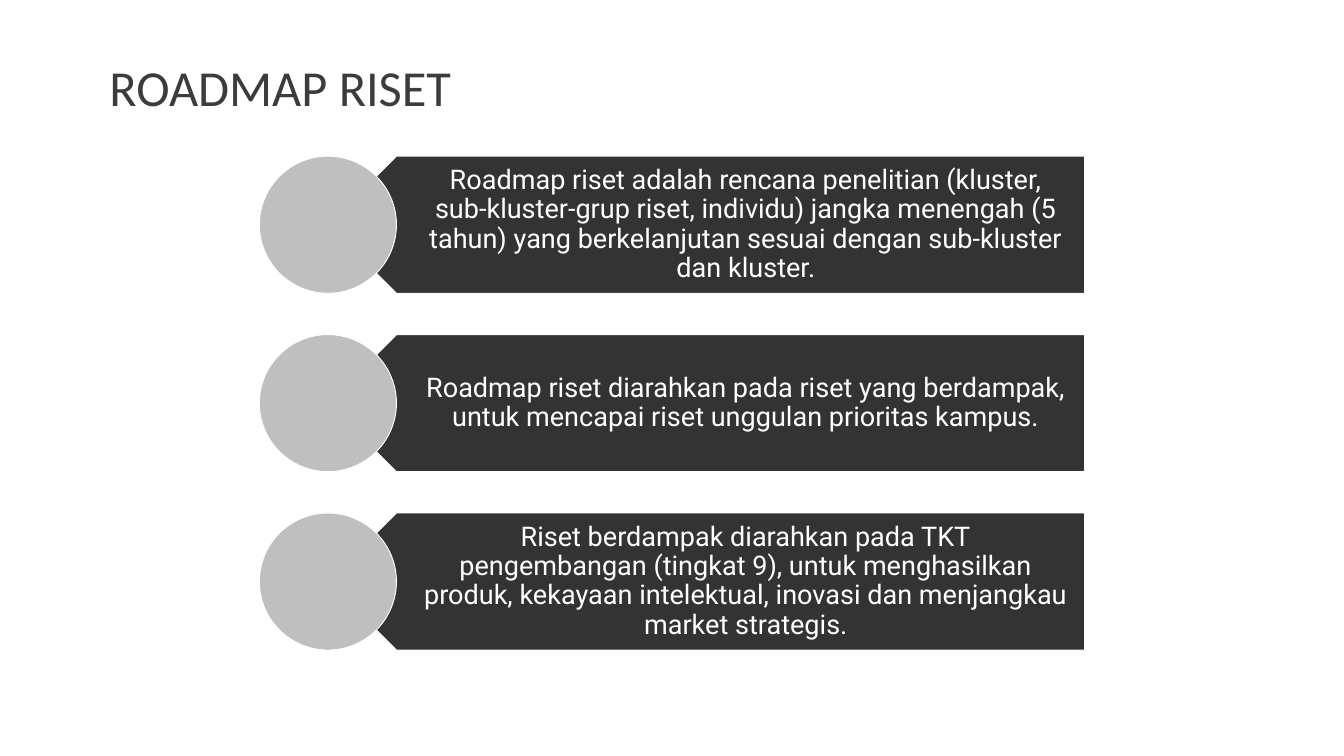
from pptx import Presentation
from pptx.dml.color import RGBColor as RGB
from pptx.enum.shapes import MSO_SHAPE as Kind
from pptx.enum.text import MSO_ANCHOR as Anchor, PP_ALIGN as Align
from pptx.util import Inches, Pt

POINTS = [
    "Roadmap riset adalah rencana penelitian (kluster, sub-kluster-grup riset, "
    "individu) jangka menengah (5 tahun) yang berkelanjutan sesuai dengan "
    "sub-kluster dan kluster.",
    "Roadmap riset diarahkan pada riset yang berdampak, untuk mencapai riset "
    "unggulan prioritas kampus.",
    "Riset berdampak diarahkan pada TKT\npengembangan (tingkat 9), untuk "
    "menghasilkan produk, kekayaan intelektual, inovasi dan menjangkau market "
    "strategis.",
]
TOP, HIGH, STEP = 20.66, 18.13, 23.6  # band rows, in % of slide height

HEAD = {"size": Pt(54), "name": "Calibri"}
BODY = {"size": Pt(29), "name": "Roboto"}
INSET = {
    "margin_left": Inches(0.9), "margin_right": Inches(0.23),
    "margin_top": Inches(0.12), "margin_bottom": Inches(0.12),
}


def color(code):
    return RGB.from_string(code)


def apply(item, values):
    for key, value in values.items():
        setattr(item, key, value)


class Deck:
    """Holds the style and the current slide; boxes are in % of its size."""

    ink, dark, gray, white = "3C3C3C", "333333", "BFBFBF", "FFFFFF"

    def __init__(self, wide, high):
        self.prs = Presentation()
        apply(self.prs, {"slide_width": Inches(wide), "slide_height": Inches(high)})
        self.slide = self.prs.slides.add_slide(self.prs.slide_layouts[6])

    def place(self, box):
        sizes = (self.prs.slide_width, self.prs.slide_height) * 2
        return [round(share * size / 100) for share, size in zip(box, sizes)]

    def shape(self, kind, box, fill, turn=0):
        item = self.slide.shapes.add_shape(kind, *self.place(box))
        item.rotation = turn
        item.shadow.inherit = False
        item.fill.solid()
        item.fill.fore_color.rgb = color(fill)
        item.line.color.rgb = color(self.white)
        item.line.width = Pt(1)

    def text(self, words, box, font, ink, align=Align.LEFT, inset=None):
        """Adds one paragraph; a newline in words is a line break."""
        frame = self.slide.shapes.add_textbox(*self.place(box)).text_frame
        apply(frame, {"word_wrap": True, "vertical_anchor": Anchor.MIDDLE})
        apply(frame, inset or {})
        para = frame.paragraphs[0]
        apply(para, {"text": words, "alignment": align, "line_spacing": 0.9})
        for run in para.runs:
            apply(run.font, font)
            run.font.color.rgb = color(ink)

    def band(self, words, top):
        self.shape(Kind.PENTAGON, (24.4, top, 56.3, HIGH), self.dark, 180)
        self.text(words, (26.95, top, 53.75, HIGH), BODY, self.white,
                  Align.CENTER, INSET)
        self.shape(Kind.OVAL, (19.3, top, 10.2, HIGH), self.gray)


def main():
    deck = Deck(20, 11.25)
    deck.text("ROADMAP RISET", (7.65, 5.33, 84.65, 13.16), HEAD, deck.ink)
    for row, words in enumerate(POINTS):
        deck.band(words, TOP + row * STEP)
    deck.prs.save("out.pptx")


if __name__ == "__main__":
    main()
